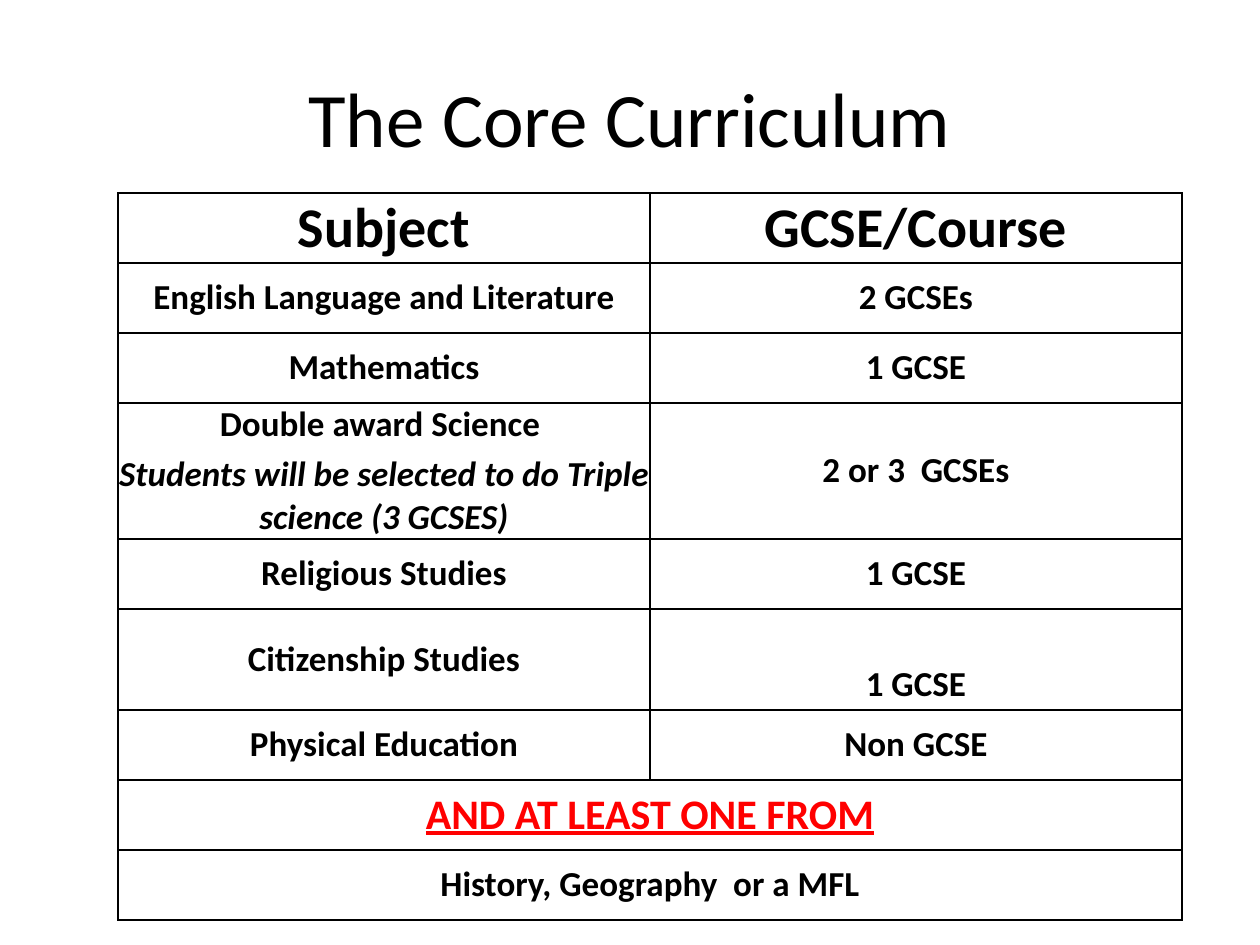
from lxml import etree
from pptx import Presentation
from pptx import util as u
from pptx.dml.color import RGBColor
from pptx.enum import text
from pptx.oxml.ns import qn

SCALE = 914400 / 126
FONT = "Calibri"
COLORS = {"ink": "000000", "accent": "FF0000"}
ROW = 70
SUBJECTS = [
    ("Subject", "GCSE/Course", ROW),
    ("English Language and Literature", "2 GCSEs", ROW),
    ("Mathematics", "1 GCSE", ROW),
    ("Double award Science \nStudents will be selected to do Triple science (3 GCSES)",
     "2 or 3  GCSEs", 136),
    ("Religious Studies", "1 GCSE", ROW),
    ("Citizenship Studies", "1 GCSE", 101),
    ("Physical Education", "Non GCSE", ROW),
    ("AND AT LEAST ONE FROM", None, ROW),
    ("History, Geography  or a MFL", None, ROW),
]
HEADER, SCIENCE, CITIZENSHIP, CHOICE = 0, 3, 5, 7


def px(length):
    """Turn px into EMU."""
    return u.Emu(round(length * SCALE))


def style(para, size, color="ink", bold=False):
    """Centre a paragraph and format its runs."""
    para.alignment = text.PP_ALIGN.CENTER
    for span in para.runs:
        span.font.name = FONT
        span.font.size = u.Pt(size)
        span.font.bold = bold
        span.font.color.rgb = RGBColor.from_string(COLORS[color])


def draw_borders(cell):
    """Give a cell a thin line on all four sides."""
    properties = cell._tc.get_or_add_tcPr()
    for index, side in enumerate(("a:lnL", "a:lnR", "a:lnT", "a:lnB")):
        line = etree.Element(qn(side), w=str(u.Pt(1)))
        fill = etree.SubElement(line, qn("a:solidFill"))
        etree.SubElement(fill, qn("a:srgbClr"), val=COLORS["ink"])
        properties.insert(index, line)


def fill_cell(cell, words, size, color="ink"):
    """Write bold centred words into a cell without margins."""
    cell.text_frame.text = words
    cell.vertical_anchor = text.MSO_ANCHOR.MIDDLE
    cell.margin_left = cell.margin_right = cell.margin_top = cell.margin_bottom = 0
    for para in cell.text_frame.paragraphs:
        style(para, size, color, bold=True)
        para.space_before = u.Pt(size * 0.2)


def add_title(page, left, top, width, height):
    """Place the slide title."""
    box = page.shapes.add_textbox(px(left), px(top), px(width), px(height))
    frame = box.text_frame
    frame.word_wrap = True
    frame.vertical_anchor = text.MSO_ANCHOR.MIDDLE
    frame.text = "The Core Curriculum"
    style(frame.paragraphs[0], 44)


def add_curriculum(page, left, top, width):
    """Place the table of subjects and courses."""
    height = sum(row[-1] for row in SUBJECTS)
    table = page.shapes.add_table(
        len(SUBJECTS), 2, px(left), px(top), px(width), px(height)).table
    table.first_row = table.horz_banding = False
    sizes = {HEADER: 32, CHOICE: 24}
    for index, (subject, course, row_height) in enumerate(SUBJECTS):
        table.rows[index].height = px(row_height)
        first, second = table.cell(index, 0), table.cell(index, 1)
        for cell in (first, second):
            cell.fill.background()
            draw_borders(cell)
        size = sizes.get(index, 20)
        fill_cell(first, subject, size, "accent" if index == CHOICE else "ink")
        if course is None:
            first.merge(second)
        else:
            fill_cell(second, course, size)
    table.cell(SCIENCE, 0).text_frame.paragraphs[1].runs[0].font.italic = True
    table.cell(CITIZENSHIP, 1).margin_top = px(50)
    table.cell(CHOICE, 0).text_frame.paragraphs[0].runs[0].font.underline = True


def main():
    """Build the deck and save it."""
    deck = Presentation()
    deck.slide_width, deck.slide_height = px(1260), px(945)
    page = deck.slides.add_slide(deck.slide_layouts[6])
    add_title(page, 63, 38, 1134, 157)
    add_curriculum(page, 118, 193, 1064)
    deck.save("out.pptx")


if __name__ == "__main__":
    main()
